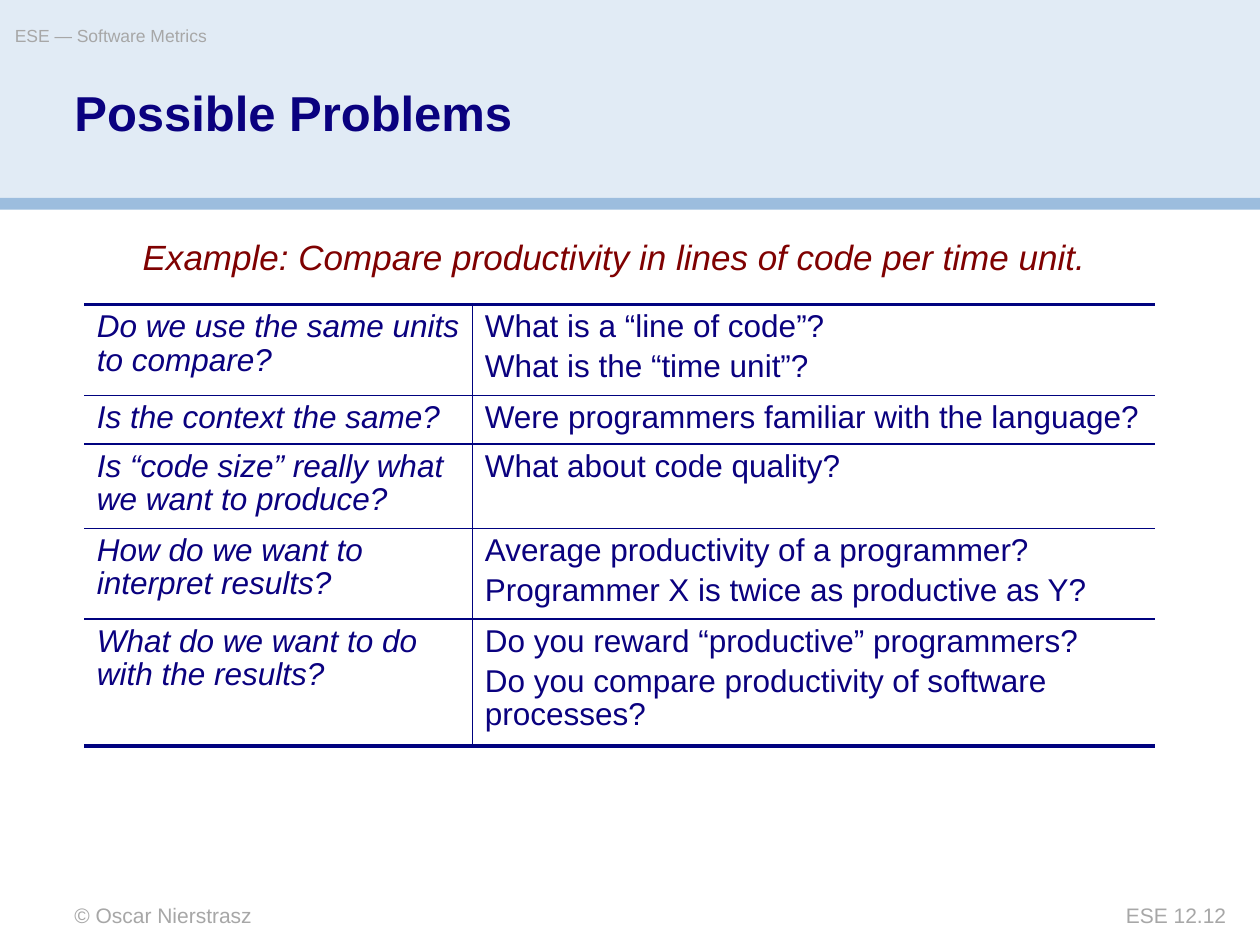
from lxml.etree import SubElement
from pptx import Presentation
from pptx.dml.color import RGBColor
from pptx.enum.shapes import MSO_SHAPE
from pptx.enum.text import MSO_ANCHOR, PP_ALIGN
from pptx.oxml.ns import qn
from pptx.util import Cm, Pt

# Content
TITLE = "Possible Problems"
LEAD = "Example: Compare productivity in lines of code per time unit."
ROWS = [  # height in cm, question, points
    (1.73, "Do we use the same units to compare?",
     ["What is a “line of code”?", "What is the “time unit”?"]),
    (0.93, "Is the context the same?",
     ["Were programmers familiar with the language?"]),
    (1.61, "Is “code size” really what we want to produce?",
     ["What about code quality?"]),
    (1.73, "How do we want to interpret results?",
     ["Average productivity of a programmer?",
      "Programmer X is twice as productive as Y?"]),
    (2.4, "What do we want to do with the results?",
     ["Do you reward “productive” programmers?",
      "Do you compare productivity of software processes?"]),
]
COLS = (7.82, 13.77)
NOTES = [  # text, box in cm, size, alignment
    ("ESE — Software Metrics", (0.3, 0.5, 15, 0.7), "head", PP_ALIGN.LEFT),
    ("© Oscar Nierstrasz", (1.5, 18.2, 10.6, 0.5), "foot", PP_ALIGN.LEFT),
    ("ESE 12.12", (20.96, 18.2, 3.76, 0.5), "foot", PP_ALIGN.RIGHT),
]
THEME = {
    "font": "Arial",
    "size": {"title": 28, "lead": 20, "cell": 18, "foot": 12, "head": 10},
    "ink": "0A017F", "lead": "7F0101", "grey": "A7A7A7",
    "band": "E1EBF5", "bar": "9CBDDE", "rule": "00027F",
    "thin": 1, "thick": 2.25,
}


def style(para, size, color, bold=False, italic=False):
    font = para.font
    font.name, font.size = THEME["font"], Pt(THEME["size"][size])
    font.bold, font.italic = bold, italic
    font.color.rgb = RGBColor.from_string(THEME[color])


def trim(frame):
    frame.word_wrap = True
    frame.vertical_anchor = MSO_ANCHOR.TOP
    frame.margin_left = frame.margin_right = 0
    frame.margin_top = frame.margin_bottom = 0


def add_band(slide, top, height, color):
    band = slide.shapes.add_shape(
        MSO_SHAPE.RECTANGLE, 0, Cm(top), Cm(25.4), Cm(height))
    band.shadow.inherit = False
    band.fill.solid()
    band.fill.fore_color.rgb = RGBColor.from_string(THEME[color])
    band.line.fill.background()
    # Bands lie behind the title
    tree = slide.shapes._spTree
    tree.remove(band._element)
    tree.insert(2, band._element)


def add_text(slide, text, box, size, color, align, italic=False):
    frame = slide.shapes.add_textbox(*map(Cm, box)).text_frame
    frame.word_wrap = True
    para = frame.paragraphs[0]
    para.text, para.alignment = text, align
    style(para, size, color, italic=italic)
    return frame


def add_rule(cell, side, width):
    line = SubElement(cell._tc.get_or_add_tcPr(), qn("a:ln" + side),
                      w=str(Pt(width)))
    if width:
        fill = SubElement(line, qn("a:solidFill"))
        SubElement(fill, qn("a:srgbClr"), val=THEME["rule"])
    else:
        SubElement(line, qn("a:noFill"))


def fill_cell(cell, lines, italic):
    frame = cell.text_frame
    frame.text = "\n".join(lines)
    for i, para in enumerate(frame.paragraphs):
        para.line_spacing = 0.95
        para.space_before = Pt(3.6 if i else 0)
        style(para, "cell", "ink", italic=italic)


def add_grid(slide):
    high = sum(row[0] for row in ROWS)
    table = slide.shapes.add_table(
        len(ROWS), len(COLS), Cm(1.7), Cm(6.14),
        Cm(sum(COLS)), Cm(high)).table
    table.first_row = table.horz_banding = False
    for col, width in zip(table.columns, COLS):
        col.width = Cm(width)
    thin, thick = THEME["thin"], THEME["thick"]
    last = len(ROWS) - 1
    for r, (height, ask, points) in enumerate(ROWS):
        table.rows[r].height = Cm(height)
        for c, lines in enumerate(([ask], points)):
            cell = table.cell(r, c)
            fill_cell(cell, lines, italic=c == 0)
            add_rule(cell, "L", thin if c else 0)
            add_rule(cell, "R", 0 if c else thin)
            add_rule(cell, "T", thin if r else thick)
            add_rule(cell, "B", thick if r == last else thin)
            cell.fill.background()


def main():
    deck = Presentation()
    deck.slide_width, deck.slide_height = Cm(25.4), Cm(19.05)
    slide = deck.slides.add_slide(deck.slide_layouts[5])

    # Header bands
    add_band(slide, 3.99, 0.24, "bar")
    add_band(slide, 0, 4, "band")

    # Title
    title = slide.shapes.title
    title.left, title.top, title.width, title.height = map(
        Cm, (1.5, 1.8, 18.4, 2.26))
    title.text = TITLE
    trim(title.text_frame)
    para = title.text_frame.paragraphs[0]
    para.alignment, para.line_spacing = PP_ALIGN.LEFT, 0.9
    style(para, "title", "ink", bold=True)

    # Header and footer notes
    for text, box, size, align in NOTES:
        trim(add_text(slide, text, box, size, "grey", align))

    # Table and its lead line
    add_grid(slide)
    add_text(slide, LEAD, (1.27, 4.62, 22.23, 1.09), "lead", "lead",
             PP_ALIGN.CENTER, italic=True)
    deck.save("out.pptx")


if __name__ == "__main__":
    main()
